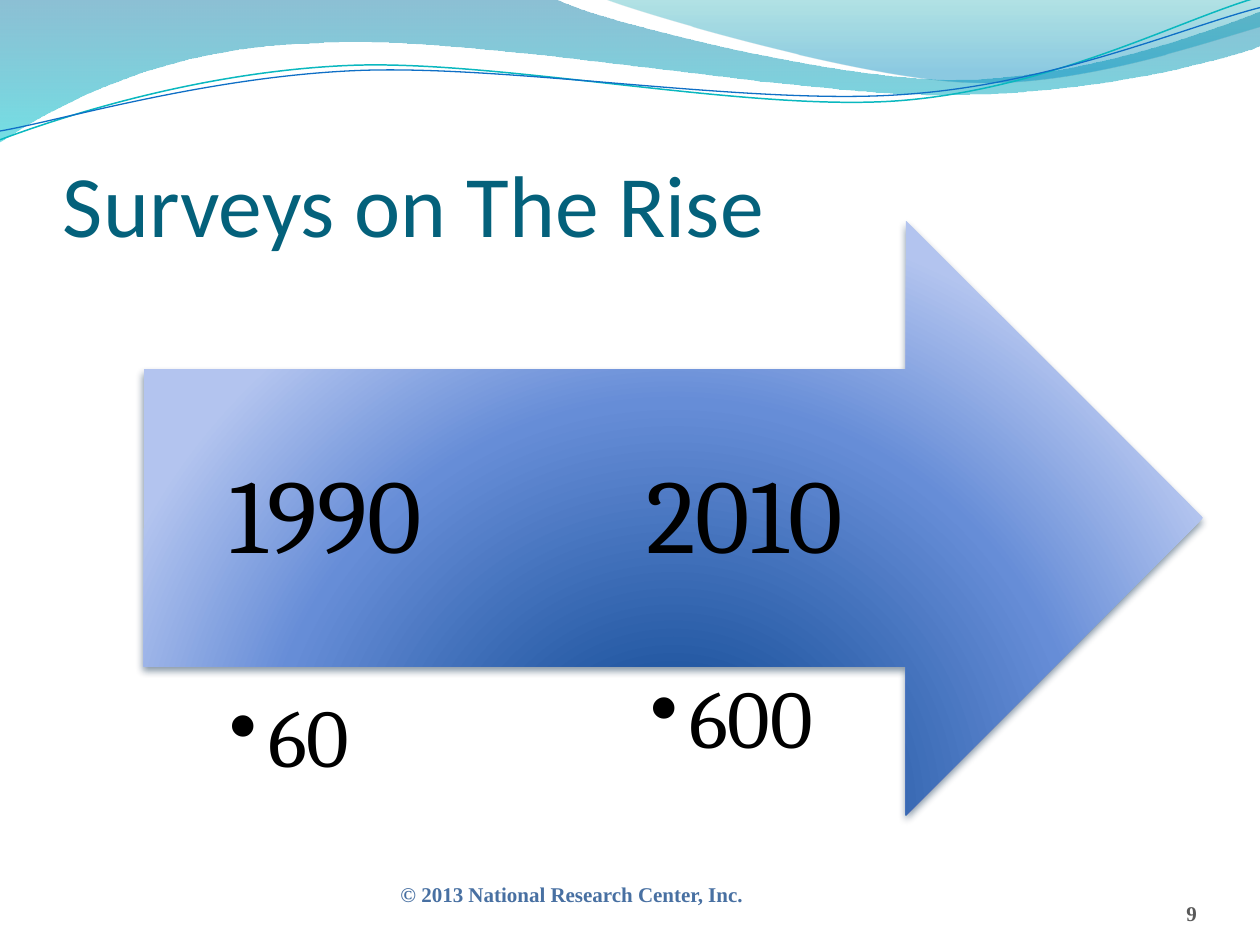
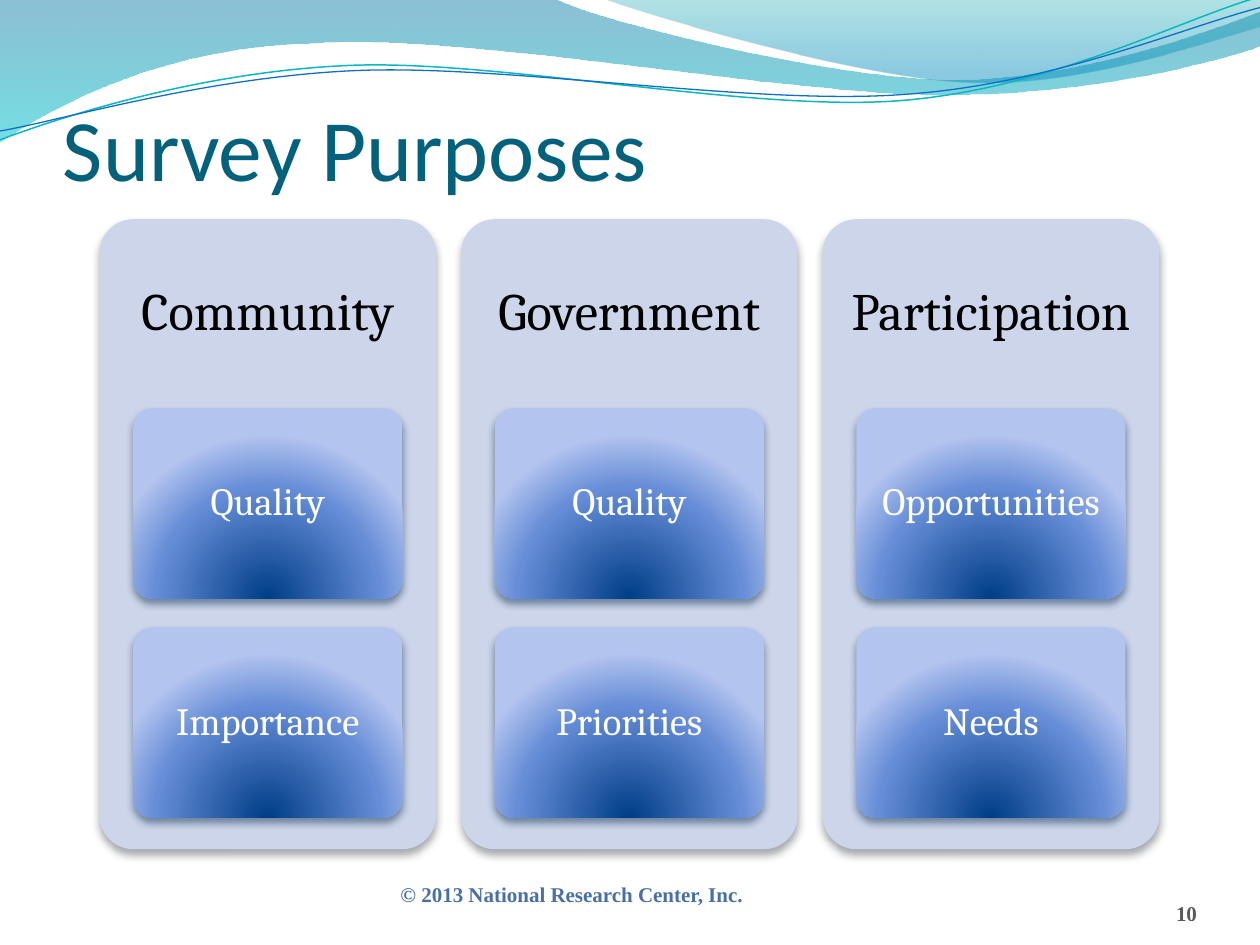
"""Build two survey slides: a growth arrow and a grid of survey purposes."""
from math import cos, radians, sin
from lxml import etree
from pptx import Presentation
from pptx.dml.color import RGBColor
from pptx.enum.shapes import MSO_SHAPE
from pptx.enum.text import MSO_ANCHOR, PP_ALIGN
from pptx.oxml.ns import qn
from pptx.util import Inches, Pt

ARROW, ROUND = MSO_SHAPE.RIGHT_ARROW, MSO_SHAPE.ROUNDED_RECTANGLE
TOP, MIDDLE, BOTTOM = MSO_ANCHOR.TOP, MSO_ANCHOR.MIDDLE, MSO_ANCHOR.BOTTOM
LEFT, CENTER, RIGHT = PP_ALIGN.LEFT, PP_ALIGN.CENTER, PP_ALIGN.RIGHT

BLACK, WHITE = RGBColor(0, 0, 0), RGBColor(255, 255, 255)
TITLE = RGBColor(0x04, 0x61, 0x7B)
CREDIT = RGBColor(0x48, 0x70, 0xA2)
NUMBER = RGBColor(0x59, 0x59, 0x59)
PANEL = RGBColor(0xCC, 0xD5, 0xEA)
PANEL_SHADOW = RGBColor(0x47, 0x4B, 0x53)
GLOW_SHADOW = RGBColor(0x04, 0x27, 0x47)
TEAL_LINE = RGBColor(0x0A, 0xB8, 0xBF)
BLUE_LINE = RGBColor(0x0F, 0x6F, 0xC6)
GLOW = [(0, RGBColor(0x00, 0x3D, 0x87), 100),
        (68, RGBColor(0x66, 0x8D, 0xD7), 100),
        (100, RGBColor(0xB3, 0xC4, 0xEF), 100)]
WAVE = [(0, RGBColor(0x00, 0x74, 0xA1), 45), (100, RGBColor(0x00, 0xC6, 0xCF), 55)]
CREST = [(0, RGBColor(0x00, 0xA1, 0xA9), 30), (80, RGBColor(0x00, 0x8B, 0xBF), 45)]

COPYRIGHT = "© 2013 National Research Center, Inc."
RISE_TITLE, RISE_PAGE = "Surveys on The Rise", 9
RISE = [("2010", (5.13, 2.94), "600", (5.16, 5.38)),
        ("1990", (1.82, 2.94), "60", (1.82, 5.53))]
PURPOSE_TITLE, PURPOSE_PAGE = "Survey Purposes", 10
PURPOSES = {"Community": ["Quality", "Importance"],
            "Government": ["Quality", "Priorities"],
            "Participation": ["Opportunities", "Needs"]}

BANDS = [
    (WAVE, (-0.01, -0.01, 10.02, 1.14), [
        (0, 0), (4.4, -0.01), (4.76, 0.17, 6.64, 0.63, 7.58, 0.63),
        (8.53, 0.63, 9.58, 0.26, 10, 0.09), (10.01, 0.36),
        (9.83, 0.44, 8.7, 0.76, 7.46, 0.75), (6.22, 0.75, 3.82, 0.28, 2.57, 0.34),
        (1.29, 0.36, 0.46, 0.83, -0.01, 1.13), (0, 0)]),
    (CREST, (4.79, -0.01, 5.21, 0.7), [
        (4.79, -0.01), (5.09, 0.11, 6.82, 0.62, 7.69, 0.65),
        (8.56, 0.69, 9.61, 0.32, 10, 0.21), (10, 0), (4.79, -0.01)]),
]
STRANDS = [
    (TEAL_LINE, 0.85, (-0.02, 0.22, 10.02, 0.71), [
        (0, 1.11), (0.48, 0.93, 1.58, 0.57, 2.77, 0.52),
        (3.95, 0.47, 5.93, 0.89, 7.13, 0.8), (8.33, 0.71, 9.38, 0.15, 9.98, -0.02)]),
    (BLUE_LINE, 0.75, (-0.02, 0.3, 10.03, 0.58), [
        (0, 1.04), (0.47, 0.96, 1.64, 0.61, 2.83, 0.56),
        (4.03, 0.51, 5.97, 0.84, 7.17, 0.75), (8.36, 0.67, 9.41, 0.21, 10, 0.06)]),
]
STRAND_TURN = 357.3

PANEL_X, PANEL_Y, PANEL_W, PANEL_H, PANEL_STEP = 0.79, 1.74, 2.67, 5, 2.87
HEAD_H = 0.3 * PANEL_H
TILE_W, TILE_H, TILE_STEP = 0.8 * PANEL_W, 1.51, 1.74
TILE_PAD = 0.05


def add(parent, tag, **attrs):
    """Append a drawing element with the given attributes."""
    return etree.SubElement(parent, qn(tag), {k: str(v) for k, v in attrs.items()})


def gradient(shape, stops, radial=False):
    """Fill a shape with a downward or a radial gradient."""
    shape.fill.background()
    blank = shape._element.spPr.find(qn("a:noFill"))
    grad = etree.Element(qn("a:gradFill"), rotWithShape="1")
    stop_list = add(grad, "a:gsLst")
    for pos, color, alpha in stops:
        rgb = add(add(stop_list, "a:gs", pos=pos * 1000), "a:srgbClr", val=color)
        if alpha < 100:
            add(rgb, "a:alpha", val=alpha * 1000)
    if radial:
        circle = add(grad, "a:path", path="circle")
        add(circle, "a:fillToRect", l=50000, t=130000, r=50000, b=-30000)
    else:
        add(grad, "a:lin", ang=5400000, scaled=1)
    blank.getparent().replace(blank, grad)


def block(s, kind, box, shadow, color=None):
    """Add a shadowed shape, glowing unless a plain color is given."""
    shape = s.shapes.add_shape(kind, *map(Inches, box))
    if kind == ROUND:
        shape.adjustments[0] = 0.1
    if color is None:
        gradient(shape, GLOW, radial=True)
    else:
        shape.fill.solid()
        shape.fill.fore_color.rgb = color
    shape.line.fill.background()
    shape.shadow.inherit = False
    effects = shape._element.spPr.find(qn("a:effectLst"))
    drop = add(effects, "a:outerShdw", blurRad=Pt(4.5), dist=Pt(3), dir=5400000,
               rotWithShape=0)
    add(add(drop, "a:srgbClr", val=shadow), "a:alpha", val=48000)


def text(s, box, words, size, font, color, bold=False, align=LEFT, anchor=TOP,
         inset=(0, 0, 0), spacing=None, bullet=False):
    """Add a one-paragraph text box with side, top and bottom insets."""
    tf = s.shapes.add_textbox(*map(Inches, box)).text_frame
    side, top, bottom = map(Inches, inset)
    frame = {"word_wrap": True, "vertical_anchor": anchor, "margin_left": side,
             "margin_right": side, "margin_top": top, "margin_bottom": bottom}
    for name, value in frame.items():
        setattr(tf, name, value)
    p = tf.paragraphs[0]
    p.alignment = align
    if spacing:
        p.line_spacing = spacing
    if bullet:
        p.level = 1
        pPr = p._p.get_or_add_pPr()
        pPr.set("marL", str(Inches(0.31)))
        pPr.set("indent", str(-Inches(0.31)))
        add(pPr, "a:buChar", char="••")
    r = p.add_run()
    r.text = words
    for name, value in {"size": Pt(size), "name": font, "bold": bold}.items():
        setattr(r.font, name, value)
    r.font.color.rgb = color


def outline(s, box, segments, turn=0):
    """Add a freeform of lines and cubic curves whose box is turned in place."""
    left, top, width, height = box
    mid_x, mid_y = left + width / 2, top + height / 2
    angle = radians(-turn)

    def local(x, y):
        dx, dy = x - mid_x, y - mid_y
        return (Inches(dx * cos(angle) - dy * sin(angle) + width / 2),
                Inches(dx * sin(angle) + dy * cos(angle) + height / 2))

    builder = s.shapes.build_freeform(0, 0)
    builder.add_line_segments([(Inches(width), Inches(height))], close=False)
    shape = builder.convert_to_shape()
    for name, value in zip(("left", "top", "width", "height"), box):
        setattr(shape, name, Inches(value))
    shape.rotation = turn
    route = shape._element.spPr.find(".//" + qn("a:path"))
    for child in list(route):
        route.remove(child)
    route.set("w", str(Inches(width)))
    route.set("h", str(Inches(height)))
    for i, seg in enumerate(segments):
        tag = "a:moveTo" if i == 0 else "a:lnTo" if len(seg) == 2 else "a:cubicBezTo"
        step = add(route, tag)
        for point in zip(seg[::2], seg[1::2]):
            x, y = local(*point)
            add(step, "a:pt", x=x, y=y)
    if segments[0] == segments[-1]:
        add(route, "a:close")
    shape.shadow.inherit = False
    return shape


def base_slide(prs, title, title_y):
    """Add a slide with waves and title."""
    s = prs.slides.add_slide(prs.slide_layouts[6])
    for stops, box, segments in BANDS:
        band = outline(s, box, segments)
        gradient(band, stops)
        band.line.fill.background()
    for color, width, box, segments in STRANDS:
        strand = outline(s, box, segments, STRAND_TURN)
        strand.fill.background()
        strand.line.color.rgb = color
        strand.line.width = Pt(width)
    text(s, (0.5, title_y, 9, 1.25), title, 50, "Calibri", TITLE,
         anchor=BOTTOM, inset=(0, 0.05, 0))
    return s


def footer(s, page):
    """Add the copyright line and page number."""
    style = {"size": 12, "font": "Times New Roman", "bold": True}
    text(s, (3.08, 6.95, 3.5, 0.4), COPYRIGHT, color=CREDIT,
         inset=(0.1, 0.05, 0.05), **style)
    text(s, (8.67, 6.95, 0.83, 0.4), str(page), color=NUMBER, align=RIGHT,
         anchor=BOTTOM, **style)


def rise_slide(prs):
    """Add the arrow with years and survey counts."""
    s = base_slide(prs, RISE_TITLE, 0.77)
    block(s, ARROW, (1.14, 1.75, 8.41, 4.72), GLOW_SHADOW)
    style = {"font": "Cambria", "color": BLACK, "spacing": 0.9}
    for year, year_at, count, count_at in RISE:
        text(s, (*count_at, 2.03, 1.18), count, 47, bullet=True, **style)
        text(s, (*year_at, 2.03, 2.36), year, 60, anchor=MIDDLE,
             inset=(0, 0.67, 0.67), **style)
    footer(s, RISE_PAGE)


def purpose_slide(prs):
    """Add one panel per purpose with its tiles."""
    s = base_slide(prs, PURPOSE_TITLE, 0.33)
    style = {"font": "Cambria", "align": CENTER, "anchor": MIDDLE, "spacing": 0.9}
    for col, (heading, topics) in enumerate(PURPOSES.items()):
        x = PANEL_X + col * PANEL_STEP
        block(s, ROUND, (x, PANEL_Y, PANEL_W, PANEL_H), PANEL_SHADOW, PANEL)
        text(s, (x, PANEL_Y, PANEL_W, HEAD_H), heading, 30, color=BLACK,
             inset=(0.12, 0.12, 0.12), **style)
        tile_x = x + (PANEL_W - TILE_W) / 2
        for row, topic in enumerate(topics):
            y = PANEL_Y + HEAD_H + row * TILE_STEP
            block(s, ROUND, (tile_x, y, TILE_W, TILE_H), GLOW_SHADOW)
            text(s, (tile_x + TILE_PAD, y + TILE_PAD, TILE_W - 2 * TILE_PAD,
                     TILE_H - 2 * TILE_PAD), topic, 22, color=WHITE,
                 inset=(0.06, 0.05, 0.05), **style)
    footer(s, PURPOSE_PAGE)


def main():
    """Build and save both slides."""
    prs = Presentation()
    prs.slide_width, prs.slide_height = Inches(10), Inches(7.5)
    rise_slide(prs)
    purpose_slide(prs)
    prs.save("out.pptx")


if __name__ == "__main__":
    main()
